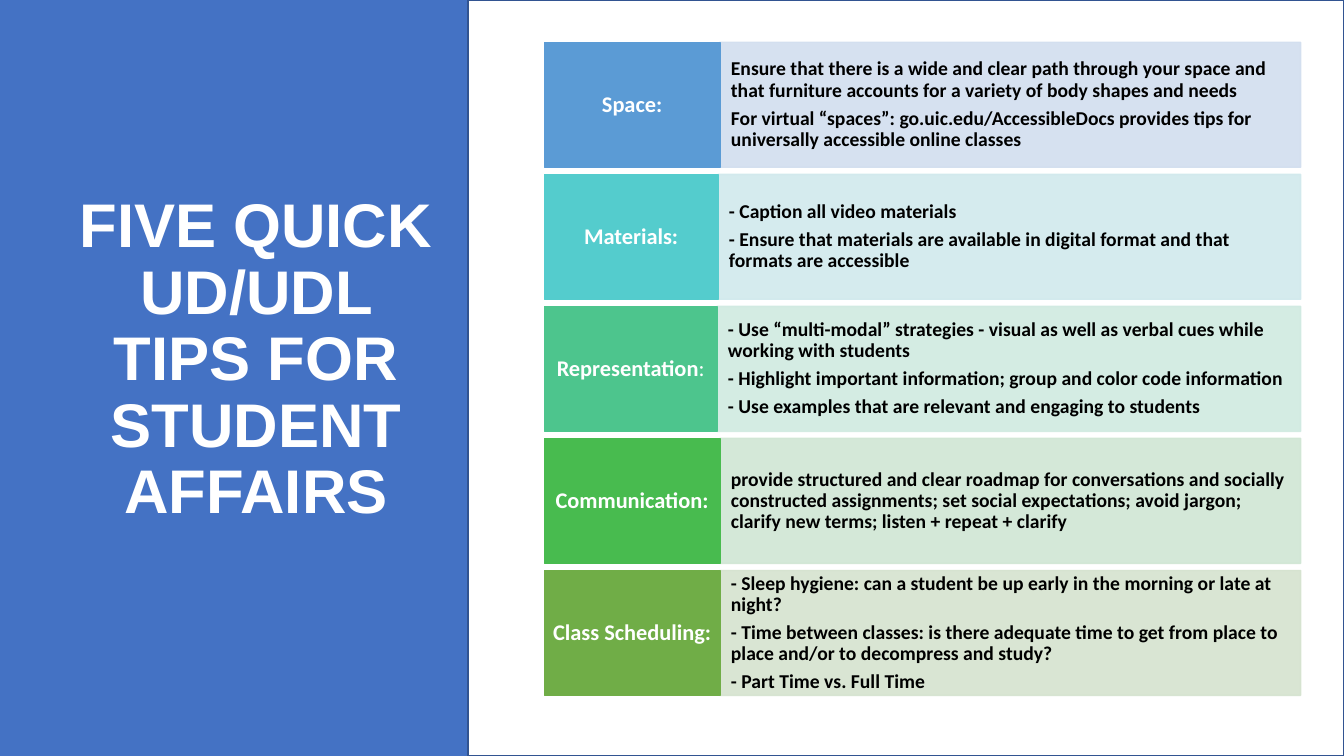
"""Build the slide of five quick UD/UDL tips for student affairs."""
from dataclasses import dataclass

import pptx
import pptx.dml.color
import pptx.enum.shapes
import pptx.enum.text
import pptx.oxml
import pptx.oxml.ns
import pptx.util
from pptx.util import Inches

ALIGN = pptx.enum.text.PP_ALIGN
LABEL_LEFT, TIPS_RIGHT = 5.4, 12.9
FIRST_TOP, ROW_PITCH, ROW_HEIGHT = 0.42, 1.31, 1.24


@dataclass
class TipRow:
    label: str
    label_color: str
    tips_color: str
    label_width: float
    tips: list[str]


@dataclass
class TextStyle:
    font: str
    size: float
    color: str
    align: ALIGN
    space_after: float = 0
    margin_x: float = 0.1
    margin_y: float = 0.05


TITLE_STYLE = TextStyle("Arial", 44, "FFFFFF", ALIGN.CENTER)
LABEL_STYLE = TextStyle("Calibri", 16, "FFFFFF", ALIGN.CENTER, 5.6, 0.08, 0.12)
TIPS_STYLE = TextStyle("Calibri", 14, "000000", ALIGN.LEFT, 4.9, 0.11, 0.31)

ROWS = [
    TipRow("Space:", "5B9BD5", "D2DEEF", 1.74, [
        "Ensure that there is a wide and clear path through your space and that furniture "
        "accounts for a variety of body shapes and needs",
        "For virtual “spaces”: go.uic.edu/AccessibleDocs provides tips for universally "
        "accessible online classes",
    ]),
    TipRow("Materials:", "54CCCD", "D1E9ED", 1.72, [
        "- Caption all video materials",
        "- Ensure that materials are available in digital format and that formats are accessible",
    ]),
    TipRow("Representation:", "4DC58D", "D0EAE1", 1.71, [
        "- Use “multi-modal” strategies - visual as well as verbal cues while working with students",
        "- Highlight important information; group and color code information",
        "- Use examples that are relevant and engaging to students",
    ]),
    TipRow("Communication:", "48BB4F", "D0E6D4", 1.74, [
        "provide structured and clear roadmap for conversations and socially constructed "
        "assignments; set social expectations; avoid jargon; clarify new terms; "
        "listen + repeat + clarify",
    ]),
    TipRow("Class Scheduling:", "70AD47", "D5E3CF", 1.74, [
        "- Sleep hygiene: can a student be up early in the morning or late at night?",
        "- Time between classes: is there adequate time to get from place to place and/or to "
        "decompress and study?",
        "- Part Time vs. Full Time",
    ]),
]


def rgb(color: str) -> pptx.dml.color.RGBColor:
    return pptx.dml.color.RGBColor.from_string(color)


def add_box(page, left: float, top: float, width: float, height: float,
            fill: str, line: str, opacity: int = 100):
    box = page.shapes.add_shape(pptx.enum.shapes.MSO_SHAPE.RECTANGLE, Inches(left),
                                Inches(top), Inches(width), Inches(height))
    box.shadow.inherit = False
    box.fill.solid()
    box.fill.fore_color.rgb = rgb(fill)
    box.line.color.rgb = rgb(line)
    box.line.width = pptx.util.Pt(1)
    if opacity < 100:
        for color in box.element.spPr.iter(pptx.oxml.ns.qn("a:srgbClr")):
            alpha = pptx.oxml.parse_xml(f'<a:alpha {pptx.oxml.ns.nsdecls("a")} val="{opacity * 1000}"/>')
            color.append(alpha)
    return box


def write_text(box, texts: list[str], style: TextStyle) -> None:
    frame = box.text_frame
    frame.text = "\n".join(texts)
    frame.word_wrap = True
    frame.vertical_anchor = pptx.enum.text.MSO_ANCHOR.MIDDLE
    frame.margin_left = frame.margin_right = Inches(style.margin_x)
    frame.margin_top = frame.margin_bottom = Inches(style.margin_y)
    for para in frame.paragraphs:
        para.alignment = style.align
        para.line_spacing = 0.9
        para.space_after = pptx.util.Pt(style.space_after)
        for span in para.runs:
            format_span(span, style)


def format_span(span, style: TextStyle, bold: bool = True) -> None:
    span.font.name = style.font
    span.font.size = pptx.util.Pt(style.size)
    span.font.bold = bold
    span.font.color.rgb = rgb(style.color)


def add_row(page, row: TipRow, top: float) -> None:
    tips_left = LABEL_LEFT + row.label_width
    tips_box = add_box(page, tips_left, top, TIPS_RIGHT - tips_left, ROW_HEIGHT,
                       row.tips_color, row.tips_color, 90)
    write_text(tips_box, row.tips, TIPS_STYLE)
    label_box = add_box(page, LABEL_LEFT, top, row.label_width, ROW_HEIGHT,
                        row.label_color, row.label_color)
    write_text(label_box, [row.label], LABEL_STYLE)
    if row.label == "Representation:":
        para = label_box.text_frame.paragraphs[0]
        para.runs[0].text = row.label[:-1]
        colon = para.add_run()
        colon.text = row.label[-1]
        format_span(colon, LABEL_STYLE, bold=False)


def main() -> None:
    deck = pptx.Presentation()
    deck.slide_width, deck.slide_height = Inches(13.33), Inches(7.5)
    page = deck.slides.add_slide(deck.slide_layouts[6])
    page.background.fill.solid()
    page.background.fill.fore_color.rgb = rgb("4472C4")
    add_box(page, 4.64, 0, 8.69, 7.5, "FFFFFF", "325491")
    for index, row in enumerate(ROWS):
        add_row(page, row, FIRST_TOP + index * ROW_PITCH)
    title = page.shapes.add_textbox(Inches(0.56), Inches(0.57), Inches(3.96), Inches(6.02))
    write_text(title, ["FIVE QUICK UD/UDL TIPS FOR STUDENT AFFAIRS"], TITLE_STYLE)
    deck.save("out.pptx")


if __name__ == "__main__":
    main()
